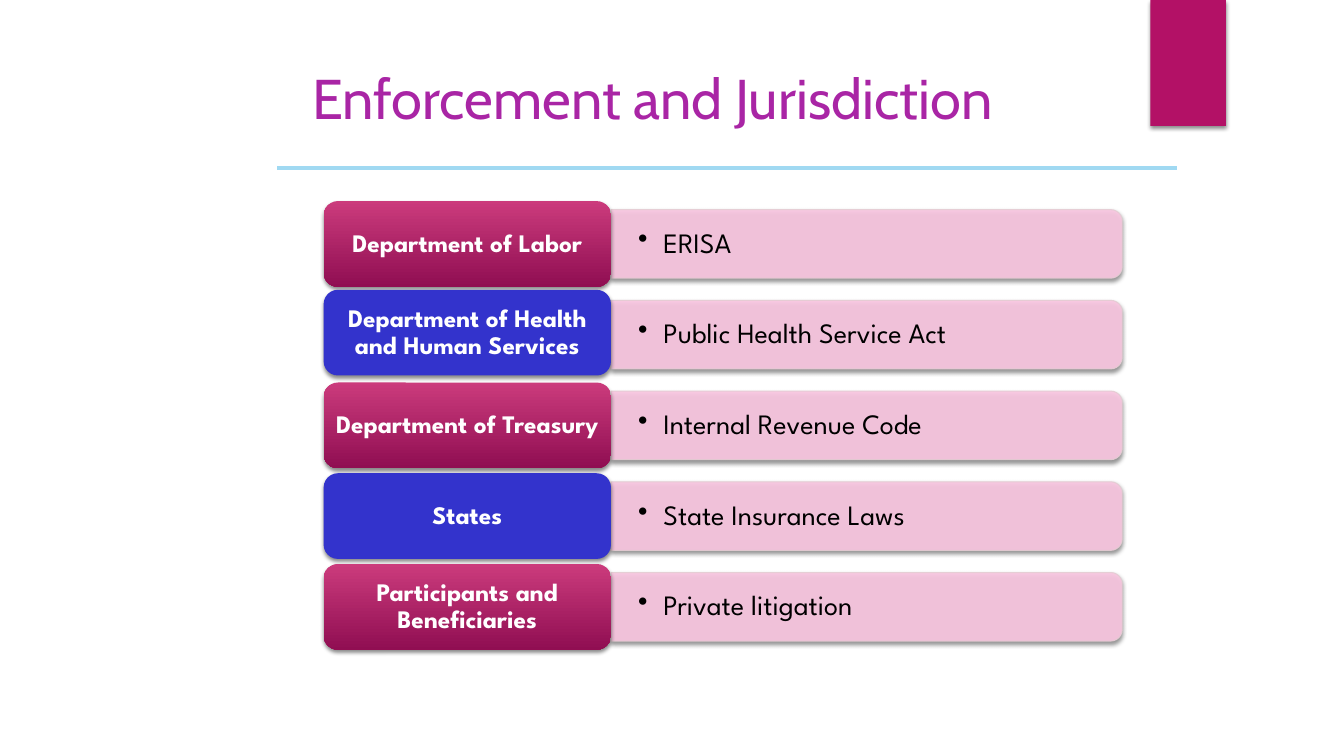
import pptx
import pptx.util
import pptx.dml.color
import pptx.enum.shapes
import pptx.enum.text
import pptx.oxml
import pptx.oxml.ns

Inches = pptx.util.Inches
Pt = pptx.util.Pt
SHAPES = pptx.enum.shapes.MSO_SHAPE

# Content: enforcing body, what it enforces, label style, label vertical offset
TITLE = "Enforcement and Jurisdiction"
ROWS = [
    ("Department of Labor", "ERISA", "magenta", 0),
    ("Department of Health and Human Services", "Public Health Service Act", "blue", -0.02),
    ("Department of Treasury", "Internal Revenue Code", "magenta", 0),
    ("States", "State Insurance Laws", "blue", 0),
    ("Participants and Beneficiaries", "Private litigation", "magenta", 0),
]
COLORS = {
    "tab": "B31166", "title": "A925A5", "rule": "A0D9F2",
    "bar": "FAC6E1", "bar_edge": "E5CCD3", "blue": "3333CC",
    "gradient_top": "CB3B7C", "gradient_bottom": "900E52",
    "white": "FFFFFF", "black": "000000",
}
TITLE_FONT, BODY_FONT = "Cabin", "League Spartan"

# Layout in inches
FIRST_CENTER, ROW_PITCH = 2.42, 0.9
LABEL_LEFT, LABEL_WIDTH, LABEL_HEIGHT = 3.21, 2.85, 0.85
BAR_LEFT, BAR_LENGTH, BAR_THICKNESS = 6.06, 5.07, 0.68
LAW_WIDTH, LAW_HEIGHT = 5.03, 0.62

presentation = pptx.Presentation()
presentation.slide_width = Inches(13.33)
presentation.slide_height = Inches(7.5)
slide = presentation.slides.add_slide(presentation.slide_layouts[6])


def rgb(name):
    return pptx.dml.color.RGBColor.from_string(COLORS[name])


def add_xml(parent, xml):
    namespace = pptx.oxml.ns.nsdecls("a")
    parent.append(pptx.oxml.parse_xml(xml.replace("NS", namespace, 1)))


def set_alpha(fill, percent):
    color = fill._xPr.find(".//" + pptx.oxml.ns.qn("a:srgbClr"))
    add_xml(color, f'<a:alpha NS val="{percent * 1000}"/>')


def add_block(preset, left, top, width, height):
    shape = slide.shapes.add_shape(
        preset, Inches(left), Inches(top), Inches(width), Inches(height))
    shape.line.fill.background()
    return shape


def add_shadow(shape):
    add_xml(shape._element.spPr,
            f'<a:effectLst NS><a:outerShdw blurRad="{Pt(3)}" dist="{Pt(2)}" '
            'dir="5400000" rotWithShape="0"><a:srgbClr val="000000">'
            '<a:alpha val="45000"/></a:srgbClr></a:outerShdw></a:effectLst>')


def write(shape, text, font_name, size, color, inset, bold=False):
    frame = shape.text_frame
    frame.word_wrap = True
    frame.vertical_anchor = pptx.enum.text.MSO_ANCHOR.MIDDLE
    frame.margin_left = frame.margin_right = Inches(inset[0])
    frame.margin_top = frame.margin_bottom = Inches(inset[1])
    paragraph = frame.paragraphs[0]
    run = paragraph.add_run()
    run.text = text
    run.font.name = font_name
    run.font.size = Pt(size)
    run.font.bold = bold
    run.font.color.rgb = rgb(color)
    return paragraph


def add_text_box(left, top, width, height):
    return slide.shapes.add_textbox(
        Inches(left), Inches(top), Inches(width), Inches(height))


# Corner tab
tab = add_block(SHAPES.RECTANGLE, 11.41, 0, 0.75, 1.25)
tab.fill.solid()
tab.fill.fore_color.rgb = rgb("tab")
add_shadow(tab)

# Title and the rule under it
write(add_text_box(3, 0.58, 9, 0.77), TITLE, TITLE_FONT, 40, "title", (0.1, 0.05))
rule = slide.shapes.add_connector(
    pptx.enum.shapes.MSO_CONNECTOR.STRAIGHT,
    Inches(2.75), Inches(1.67), Inches(11.67), Inches(1.67))
rule.line.color.rgb = rgb("rule")
rule.line.width = Pt(3)
add_xml(rule._element.spPr, "<a:effectLst NS/>")

# Rows: bar, bulleted law, label
for index, (body, law, style, offset) in enumerate(ROWS):
    center = FIRST_CENTER + index * ROW_PITCH

    # The bar is an upright shape turned so its rounded end faces right
    bar = add_block(SHAPES.ROUND_2_SAME_RECTANGLE,
                    BAR_LEFT + (BAR_LENGTH - BAR_THICKNESS) / 2,
                    center - BAR_LENGTH / 2, BAR_THICKNESS, BAR_LENGTH)
    bar.rotation = 90
    bar.fill.solid()
    bar.fill.fore_color.rgb = rgb("bar")
    set_alpha(bar.fill, 90)
    bar.line.color.rgb = rgb("bar_edge")
    bar.line.width = Pt(0.75)
    set_alpha(bar.line.fill, 90)
    add_shadow(bar)

    law_box = add_text_box(BAR_LEFT, center - LAW_HEIGHT / 2, LAW_WIDTH, LAW_HEIGHT)
    paragraph = write(law_box, law, BODY_FONT, 20, "black", (0.27, 0.14))
    paragraph.line_spacing = 0.9
    properties = paragraph._p.get_or_add_pPr()
    properties.set("marL", str(Inches(0.25)))
    properties.set("indent", str(Inches(-0.25)))
    add_xml(properties, '<a:buChar NS char="•"/>')

    label = add_block(SHAPES.ROUNDED_RECTANGLE, LABEL_LEFT,
                      center - LABEL_HEIGHT / 2 + offset, LABEL_WIDTH, LABEL_HEIGHT)
    if style == "blue":
        label.fill.solid()
        label.fill.fore_color.rgb = rgb("blue")
    else:
        label.fill.gradient()
        label.fill.gradient_angle = 270
        for stop, name in zip(label.fill.gradient_stops, ("gradient_top", "gradient_bottom")):
            stop.color.rgb = rgb(name)
    add_shadow(label)
    paragraph = write(label, body, BODY_FONT, 18, "white", (0.07, 0.04), bold=True)
    paragraph.alignment = pptx.enum.text.PP_ALIGN.CENTER
    paragraph.line_spacing = 0.9

presentation.save("out.pptx")
